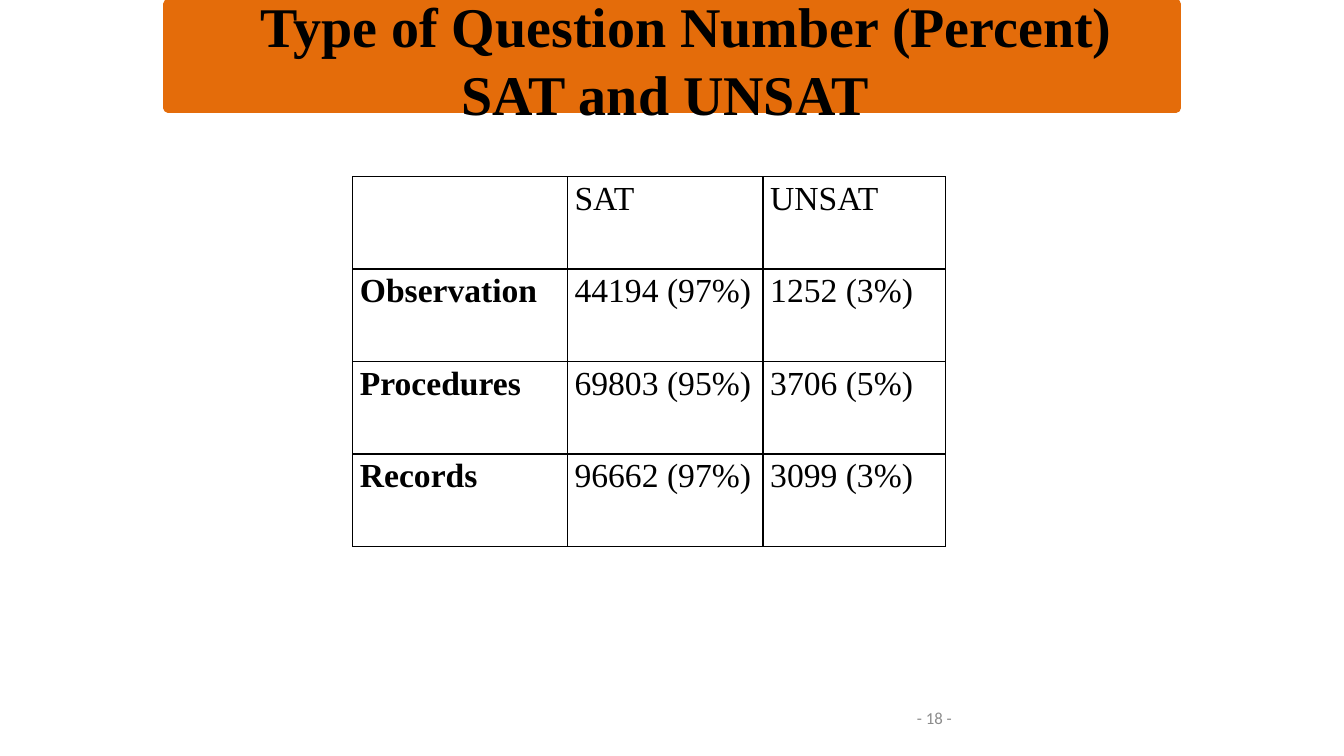
from pptx import Presentation
from pptx import util as u
from pptx.dml.color import RGBColor
from pptx.enum import shapes, text
from pptx.oxml import parse_xml
from pptx.oxml.ns import nsdecls

TITLE = "Type of Question Number (Percent) SAT and UNSAT"
PAGE = "- 18 -"
ROWS = [
    ("", "SAT", "UNSAT"),
    ("Observation", "44194 (97%)", "1252 (3%)"),
    ("Procedures", "69803 (95%)", "3706 (5%)"),
    ("Records", "96662 (97%)", "3099 (3%)"),
]
COL_WIDTHS = (5.41, 4.93, 4.6)
ROW_HEIGHT = 2.33
BANNER = (4.24, 0.1, 25.4, 2.62)
TITLE_BOX = (4.24, -0.33, 25.4, 2.03)
PAGE_BOX = (22.86, 17.58, 5.92, 1.02)
TABLE_AT = (8.89, 4.45)
ORANGE, BLACK, GREY, WHITE = "E46C0A", "000000", "8C8C8C", "FFFFFF"
TITLE_FONT = {"name": "Times New Roman", "size": u.Pt(40), "bold": True}
PAGE_FONT = {"name": "Calibri", "size": u.Pt(12), "bold": False}
CELL_FONT = {"name": "Times New Roman", "size": u.Pt(24), "bold": False}
CELL_FORMAT = {"margin_left": u.Cm(0.18), "margin_right": u.Cm(0.18),
               "margin_top": u.Cm(0.1), "margin_bottom": u.Cm(0.1)}


def cm(values):
    return [u.Cm(v) for v in values]


def paint(color, value):
    color.rgb = RGBColor.from_string(value)


def apply(target, values):
    for name, value in values.items():
        setattr(target, name, value)


def write(p, content, font, color):
    r = p.add_run()
    r.text = content
    apply(r.font, font)
    paint(r.font.color, color)


def add_text(s, box, content, font, color, anchor):
    tf = s.shapes.add_textbox(*cm(box)).text_frame
    apply(tf, {"word_wrap": True, "vertical_anchor": anchor})
    write(tf.paragraphs[0], content, font, color)
    return tf


def add_borders(cell):
    tcPr = cell._tc.get_or_add_tcPr()
    for i, side in enumerate(("lnL", "lnR", "lnT", "lnB")):
        tcPr.insert(i, parse_xml(
            f'<a:{side} {nsdecls("a")} w="12700"><a:solidFill>'
            f'<a:srgbClr val="{BLACK}"/></a:solidFill></a:{side}>'))


def add_banner(s):
    sp = s.shapes.add_shape(shapes.MSO_SHAPE.RECTANGLE, *cm(BANNER))
    sp.shadow.inherit = False
    sp.fill.solid()
    paint(sp.fill.fore_color, ORANGE)
    paint(sp.line.color, ORANGE)
    sp.line.width = u.Pt(6.75)


def add_title(s):
    tf = add_text(s, TITLE_BOX, TITLE, TITLE_FONT, BLACK, text.MSO_ANCHOR.TOP)
    tf.margin_right = u.Cm(0.61)
    p = tf.paragraphs[0]
    apply(p, {"alignment": text.PP_ALIGN.CENTER, "line_spacing": u.Pt(48)})
    apply_indent = {"marL": 0, "indent": u.Cm(1.06)}
    for name, value in apply_indent.items():
        p._p.get_or_add_pPr().set(name, str(value))


def add_results(s):
    size = (sum(COL_WIDTHS), ROW_HEIGHT * len(ROWS))
    table = s.shapes.add_table(len(ROWS), len(COL_WIDTHS),
                               *cm(TABLE_AT + size)).table
    apply(table, {"first_row": False, "horz_banding": False})
    for col, width in zip(table.columns, COL_WIDTHS):
        col.width = u.Cm(width)
    for i, values in enumerate(ROWS):
        table.rows[i].height = u.Cm(ROW_HEIGHT)
        for j, value in enumerate(values):
            cell = table.cell(i, j)
            apply(cell, CELL_FORMAT)
            cell.fill.solid()
            paint(cell.fill.fore_color, WHITE)
            add_borders(cell)
            if value:
                write(cell.text_frame.paragraphs[0], value,
                      {**CELL_FONT, "bold": j == 0}, BLACK)


def main():
    prs = Presentation()
    apply(prs, {"slide_width": u.Cm(33.87), "slide_height": u.Cm(19.05)})
    s = prs.slides.add_slide(prs.slide_layouts[6])
    add_banner(s)
    add_text(s, PAGE_BOX, PAGE, PAGE_FONT, GREY, text.MSO_ANCHOR.MIDDLE)
    add_title(s)
    add_results(s)
    prs.save("out.pptx")


if __name__ == "__main__":
    main()
